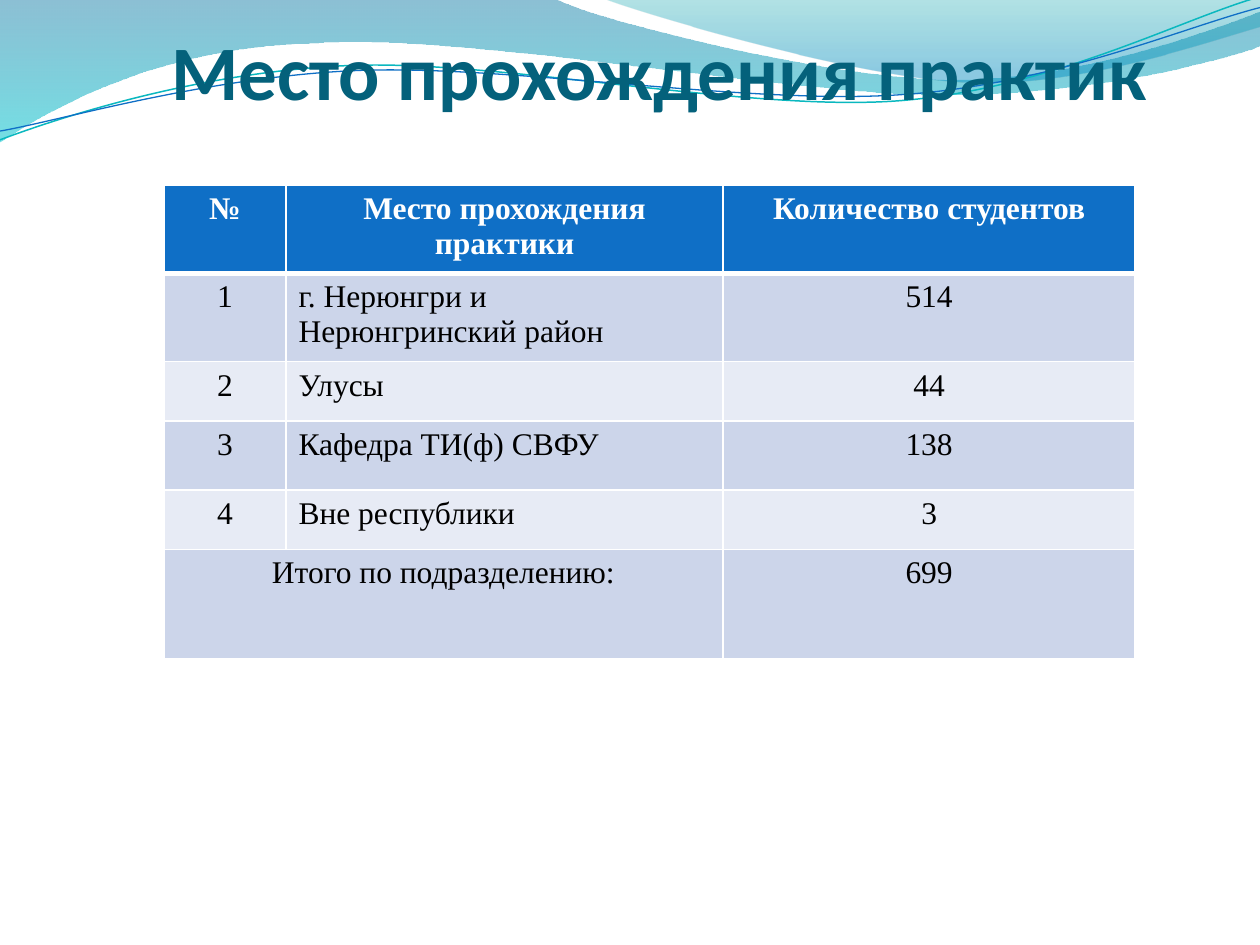
from dataclasses import dataclass
from math import cos, radians, sin

from lxml.etree import SubElement
from pptx import Presentation
from pptx.dml.color import RGBColor
from pptx.enum.text import MSO_ANCHOR, PP_ALIGN
from pptx.oxml import parse_xml
from pptx.oxml.ns import nsdecls, qn
from pptx.util import Inches, Pt


@dataclass(frozen=True)
class Theme:
    """Colours, fonts and type sizes of the slide."""
    title: str = "04617B"
    header: str = "0F6FC6"
    teal: str = "0AB8BF"
    bands: tuple = ("CCD5EA", "E7EBF5")
    white: str = "FFFFFF"
    text: str = "000000"
    title_font: str = "Calibri"
    table_font: str = "Times New Roman"
    title_size: int = 44
    table_size: int = 18


T = Theme()
COLS, ROWS = 100, 75
CELL = Inches(0.1)

BROAD_WAVE = [
    [(0, 0)], [(44, -0.1)],
    [(47.6, 1.7), (66.4, 6.3), (75.8, 6.3)], [(85.3, 6.3), (95.8, 2.6), (100, 0.9)],
    [(100.1, 3.6)],
    [(98.3, 4.4), (87, 7.6), (74.6, 7.5)], [(62.2, 7.5), (38.2, 2.8), (25.7, 3.4)],
    [(12.9, 3.6), (4.6, 8.3), (-0.1, 11.3)],
]
CORNER_WAVE = [
    [(47.9, -0.1)],
    [(50.9, 1.1), (68.2, 6.2), (76.9, 6.5)], [(85.6, 6.9), (96.1, 3.2), (100, 2.1)],
    [(100, 0)],
]
TEAL_LINE = [
    [(0, 11.1)],
    [(4.8, 9.3), (15.8, 5.7), (27.7, 5.2)], [(39.5, 4.7), (59.3, 8.9), (71.3, 8)],
    [(83.3, 7.1), (93.8, 1.5), (99.8, -0.2)],
]
BLUE_LINE = [
    [(0, 10.4)],
    [(4.7, 9.6), (16.4, 6.1), (28.3, 5.6)], [(40.3, 5.1), (59.7, 8.4), (71.7, 7.5)],
    [(83.6, 6.7), (94.1, 2.1), (100, 0.6)],
]
TABLE = [
    ("№", "Место прохождения практики", "Количество студентов"),
    ("1", "г. Нерюнгри и Нерюнгринский район", "514"),
    ("2", "Улусы", "44"),
    ("3", "Кафедра ТИ(ф) СВФУ", "138"),
    ("4", "Вне республики", "3"),
    ("Итого по подразделению:", "", "699"),
]


def grid(*cells):
    """Turn grid cells into lengths."""
    return [round(c * CELL) for c in cells]


def set_font(p, name, size, color, bold):
    """Set the font of a whole paragraph."""
    p.font.name, p.font.size, p.font.bold = name, Pt(size), bold
    p.font.color.rgb = RGBColor.from_string(color)


def turn(segments, center, degrees):
    """Rotate all points of a path around a centre."""
    c, d = cos(radians(degrees)), sin(radians(degrees))
    cx, cy = center
    return [[(cx + (x - cx) * c - (y - cy) * d, cy + (x - cx) * d + (y - cy) * c)
             for x, y in seg] for seg in segments]


def add_curve(shapes, segments, close):
    """Draw a freeform; segments of three points become Bézier curves."""
    (start,), *rest = segments
    fb = shapes.build_freeform(*grid(*start))
    fb.add_line_segments([grid(*pt) for seg in rest for pt in seg], close=close)
    sp = fb.convert_to_shape()
    sp.shadow.inherit = False
    lines = iter(list(sp._element.iter(qn("a:lnTo"))))
    for seg in rest:
        first, *others = [next(lines) for _ in seg]
        if others:
            first.tag = qn("a:cubicBezTo")
        for ln in others:
            first.append(ln[0])
            ln.getparent().remove(ln)
    return sp


def add_wave(s, segments, stops):
    """Add a closed wave with a see-through vertical gradient."""
    sp = add_curve(s.shapes, segments, True)
    sp.line.fill.background()
    gs = "".join(
        f'<a:gs pos="{pos * 1000}"><a:srgbClr val="{color}">'
        f'<a:alpha val="{alpha * 1000}"/></a:srgbClr></a:gs>'
        for pos, color, alpha in stops)
    sp._element.spPr.find(qn("a:custGeom")).addnext(parse_xml(
        f'<a:gradFill {nsdecls("a")} rotWithShape="1"><a:gsLst>{gs}</a:gsLst>'
        '<a:lin ang="5400000" scaled="0"/></a:gradFill>'))


def add_wave_lines(s, lines, tilt):
    """Add a group of tilted thin wave lines."""
    group = s.shapes.add_group_shape()
    for segments, center, color, width in lines:
        sp = add_curve(group.shapes, turn(segments, center, -tilt), False)
        sp.rotation = tilt
        sp.fill.background()
        sp.line.color.rgb = RGBColor.from_string(color)
        sp.line.width = Pt(width)


def add_title(s, box, text):
    """Add the title in its box."""
    tf = s.shapes.add_textbox(*grid(*box)).text_frame
    tf.word_wrap = True
    tf.vertical_anchor = MSO_ANCHOR.BOTTOM
    tf.margin_left = tf.margin_right = tf.margin_bottom = 0
    p = tf.paragraphs[0]
    p.text, p.alignment = text, PP_ALIGN.CENTER
    set_font(p, T.title_font, T.title_size, T.title, True)


def set_borders(cell, top, bottom):
    """Give a cell white borders."""
    tcPr = cell._tc.get_or_add_tcPr()
    for side, width in (("L", 1), ("R", 1), ("T", top), ("B", bottom)):
        ln = SubElement(tcPr, qn(f"a:ln{side}"), w=str(Pt(width)))
        SubElement(SubElement(ln, qn("a:solidFill")), qn("a:srgbClr"), val=T.white)


def add_practice_table(s, box, widths, heights):
    """Add the table of practice places with a merged total row."""
    table = s.shapes.add_table(len(TABLE), len(widths), *grid(*box)).table
    for column, width in zip(table.columns, grid(*widths)):
        column.width = width
    for row, height in zip(table.rows, grid(*heights)):
        row.height = height
    last = len(TABLE) - 1
    for i, texts in enumerate(TABLE):
        head = i == 0
        for j, text in enumerate(texts):
            cell = table.cell(i, j)
            set_borders(cell, 3 if i == 1 else 1, 3 if head else 1)
            cell.fill.solid()
            cell.fill.fore_color.rgb = RGBColor.from_string(
                T.header if head else T.bands[(i - 1) % 2])
            p = cell.text_frame.paragraphs[0]
            p.text = text
            left = j == 1 and 0 < i < last
            p.alignment = PP_ALIGN.LEFT if left else PP_ALIGN.CENTER
            set_font(p, T.table_font, T.table_size, T.white if head else T.text, head)
    table.cell(last, 0).merge(table.cell(last, 1))


def main():
    """Build the slide and save it."""
    prs = Presentation()
    prs.slide_width, prs.slide_height = grid(COLS, ROWS)
    s = prs.slides.add_slide(prs.slide_layouts[6])
    add_wave(s, BROAD_WAVE, [(0, "0074A1", 45), (100, "00C6CF", 55)])
    add_wave(s, CORNER_WAVE, [(0, "00A1A9", 30), (80, "008BBF", 45)])
    add_wave_lines(s, [(TEAL_LINE, (49.9, 5.75), T.teal, 0.85),
                       (BLUE_LINE, (49.95, 5.9), T.header, 0.75)], 357.3)
    add_title(s, (9.4, 0.8, 85.9, 8.4), "Место прохождения практик")
    add_practice_table(s, (13, 14.7, 77.2, 37.6), (9.7, 34.7, 32.7),
                       (4.1, 5.8, 4.7, 5.5, 4.7, 8.7))
    prs.save("out.pptx")


if __name__ == "__main__":
    main()
